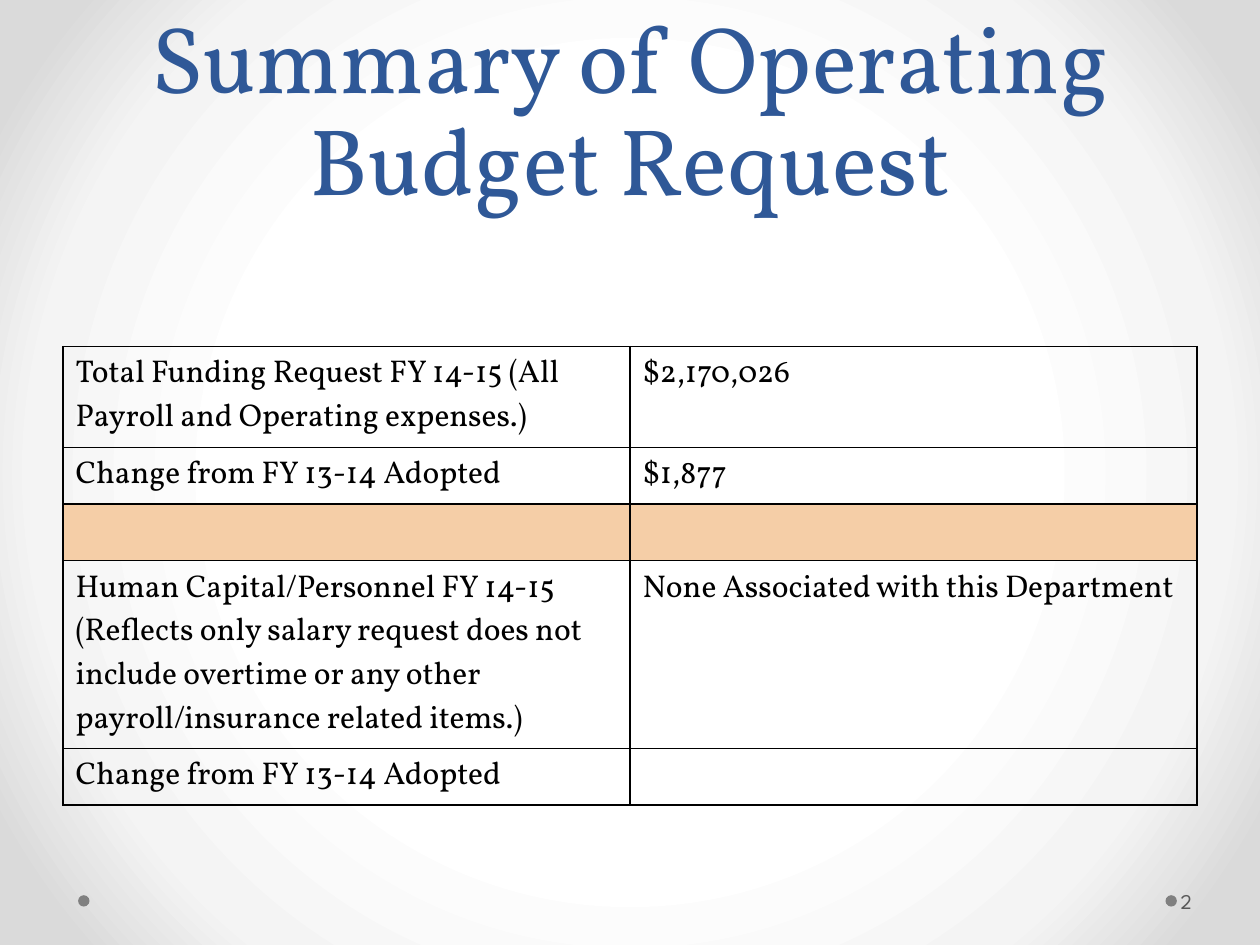
from pptx import Presentation
from pptx.dml.color import RGBColor
from pptx.enum.shapes import MSO_SHAPE
from pptx.enum.text import MSO_ANCHOR, PP_ALIGN
from pptx.oxml import parse_xml
from pptx.oxml.ns import nsdecls
from pptx.util import Inches, Pt

SERIF = "Vollkorn"
SANS = "League Spartan"
ROWS = [
    (0.8, "Total Funding Request FY 14-15 (All Payroll and Operating expenses.)", "$2,170,026"),
    (0.45, "Change from FY 13-14 Adopted", "$1,877"),
    (0.45, "", ""),
    (1.49, "Human Capital/Personnel FY 14-15 (Reflects only salary request does not "
           "include overtime or any other payroll/insurance related items.)",
     "None Associated with this Department"),
    (0.45, "Change from FY 13-14 Adopted", ""),
]


def color(code):
    """Turn a hex string into a colour."""
    return RGBColor.from_string(code)


def write(frame, text, size=18, font=SERIF, ink="000000", align=PP_ALIGN.LEFT, line=None):
    """Write one formatted paragraph into a text frame."""
    frame.word_wrap = True
    par = frame.paragraphs[0]
    par.alignment = align
    if line:
        par.line_spacing = Pt(line)
    if text:
        run = par.add_run()
        run.text = text
        run.font.size = Pt(size)
        run.font.name = font
        run.font.color.rgb = color(ink)


def add_back(slide, stops):
    """Give the slide a round gradient from its centre."""
    marks = "".join(f'<a:gs pos="{pos * 1000}"><a:srgbClr val="{code}"/></a:gs>'
                    for pos, code in stops)
    back = parse_xml(
        f'<p:bg {nsdecls("p", "a")}><p:bgPr><a:gradFill rotWithShape="1">'
        f'<a:gsLst>{marks}</a:gsLst><a:path path="circle">'
        '<a:fillToRect l="50000" t="50000" r="50000" b="50000"/></a:path>'
        '</a:gradFill><a:effectLst/></p:bgPr></p:bg>')
    slide.element.cSld.insert(0, back)


def add_title(slide, box, text):
    """Place the title at the bottom of its box."""
    frame = slide.shapes.add_textbox(*map(Inches, box)).text_frame
    frame.vertical_anchor = MSO_ANCHOR.BOTTOM
    write(frame, text, size=54, ink="2F5897", align=PP_ALIGN.CENTER, line=58)


def add_edges(cell, ink="000000", width=1):
    """Draw a line on each side of a cell."""
    props = cell._tc.get_or_add_tcPr()
    for spot, side in enumerate("LRTB"):
        props.insert(spot, parse_xml(
            f'<a:ln{side} {nsdecls("a")} w="{Pt(width)}"><a:solidFill>'
            f'<a:srgbClr val="{ink}"/></a:solidFill></a:ln{side}>'))


def add_grid(slide, box, rows):
    """Place the budget table, with empty rows as coloured bands."""
    grid = slide.shapes.add_table(len(rows), 2, *map(Inches, box)).table
    grid.first_row = grid.horz_banding = False
    for row, (high, *texts) in zip(grid.rows, rows):
        row.height = Inches(high)
        for cell, text in zip(row.cells, texts):
            write(cell.text_frame, text)
            add_edges(cell)
            if any(texts):
                cell.fill.background()
            else:
                cell.fill.solid()
                cell.fill.fore_color.rgb = color("F5CEA7")


def add_foot(slide, box, number):
    """Place the two dots and the page number in the footer."""
    left, top, width, height = box
    size = 0.09
    for spot in (left, left + width - size):
        place = (spot, top + (height - size) / 2, size, size)
        dot = slide.shapes.add_shape(MSO_SHAPE.OVAL, *map(Inches, place))
        dot.shadow.inherit = False
        dot.fill.solid()
        dot.fill.fore_color.rgb = color("808080")
        dot.line.fill.background()
    place = (left + width, top, 0.61, height)
    frame = slide.shapes.add_textbox(*map(Inches, place)).text_frame
    frame.margin_left = Inches(0.03)
    frame.margin_right = Inches(0.05)
    frame.vertical_anchor = MSO_ANCHOR.MIDDLE
    write(frame, number, size=12, font=SANS, ink="595959")


def main():
    """Build and save the budget slide."""
    deck = Presentation()
    deck.slide_width, deck.slide_height = Inches(10), Inches(7.5)
    slide = deck.slides.add_slide(deck.slide_layouts[6])
    add_back(slide, [(50, "FFFFFF"), (76, "F4F4F4"), (92, "DADADA")])
    add_foot(slide, (0.62, 6.95, 8.72, 0.4), "2")
    add_title(slide, (0.5, 0, 9, 1.75), "Summary of Operating Budget Request")
    add_grid(slide, (0.5, 2.75, 9, 3.64), ROWS)
    deck.save("out.pptx")


if __name__ == "__main__":
    main()
